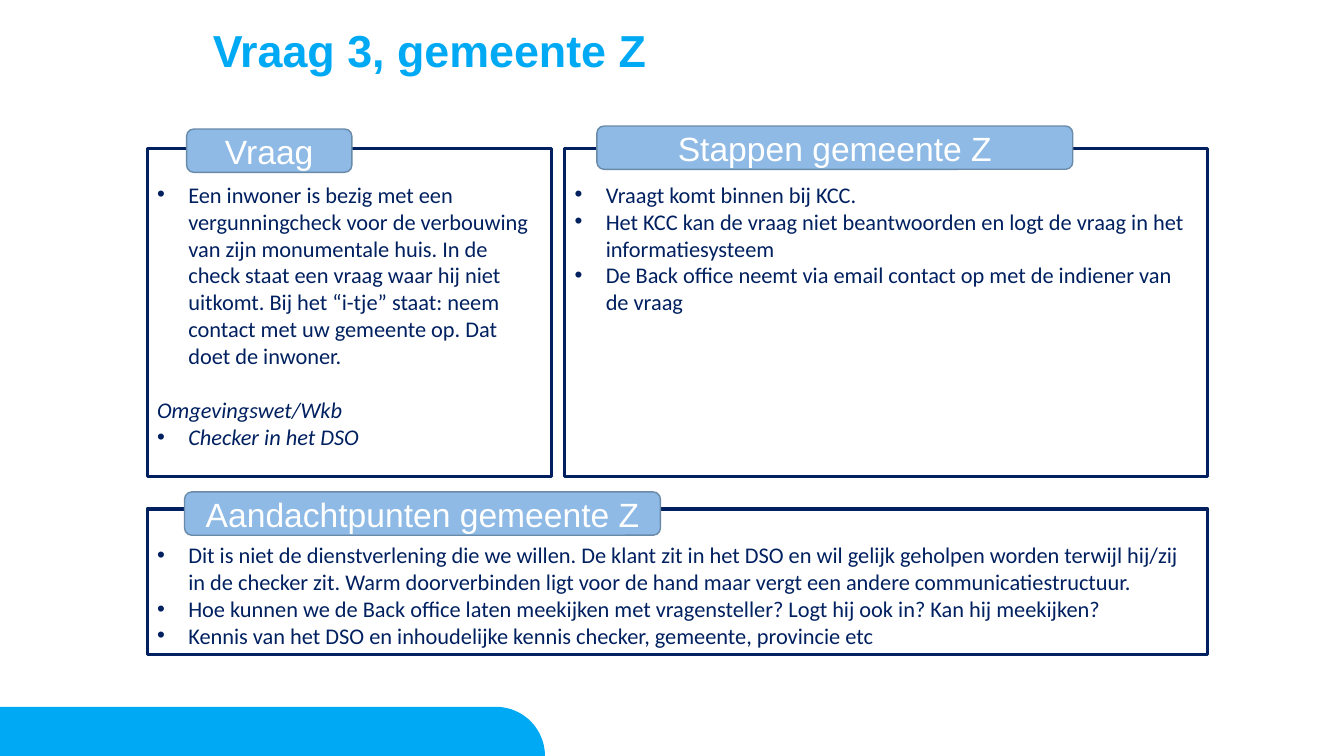
import math
from lxml import etree
from pptx import Presentation
from pptx import util as u
from pptx.dml.color import RGBColor
from pptx.enum import shapes, text
from pptx.oxml.ns import qn

COLORS = {"sky": "00A9F3", "navy": "002060", "tab": "8EBAE5",
          "tab_edge": "698AA9", "white": "FFFFFF"}

presentation = Presentation()
presentation.slide_width, presentation.slide_height = u.Inches(13.33), u.Inches(7.5)
column = presentation.slide_width / 100
row = presentation.slide_height / 100
slide = presentation.slides.add_slide(presentation.slide_layouts[5])


def write(paragraph, content, *, size, color, font="Calibri", bold=False, italic=False,
          bullet=False, align=text.PP_ALIGN.LEFT, before=0):
    if bullet:
        properties = paragraph._p.get_or_add_pPr()
        properties.set("marL", str(u.Inches(0.31)))
        properties.set("indent", str(-u.Inches(0.31)))
        etree.SubElement(properties, qn("a:buFont"), typeface="Arial")
        etree.SubElement(properties, qn("a:buChar"), char="•")
    paragraph.text = content
    paragraph.alignment = align
    paragraph.space_before = u.Pt(before)
    paragraph.font.name = font
    paragraph.font.size = u.Pt(size)
    paragraph.font.bold = bold
    paragraph.font.italic = italic
    paragraph.font.color.rgb = RGBColor.from_string(COLORS[color])


def add_box(kind, left, top, width, height, *, line, line_width, fill=None):
    """Add a preset shape placed in grid columns and rows."""
    shape = slide.shapes.add_shape(kind, round(left * column), round(top * row),
                                   round(width * column), round(height * row))
    shape.shadow.inherit = False
    if fill:
        shape.fill.solid()
        shape.fill.fore_color.rgb = RGBColor.from_string(COLORS[fill])
    else:
        shape.fill.background()
    shape.line.color.rgb = RGBColor.from_string(COLORS[line])
    shape.line.width = u.Pt(line_width)
    shape.text_frame.word_wrap = True
    return shape


# Footer band with a quarter circle at its right end
band_right, radius = 40.55 * column, 6.5 * row
bottom = presentation.slide_height
arc = [(band_right - radius + radius * math.sin(math.radians(angle)),
        bottom - radius * math.cos(math.radians(angle))) for angle in range(0, 91, 3)]
builder = slide.shapes.build_freeform(0, bottom)
builder.add_line_segments([(0, bottom - radius), *arc], close=True)
footer = builder.convert_to_shape()
footer.shadow.inherit = False
footer.fill.solid()
footer.fill.fore_color.rgb = RGBColor.from_string(COLORS["sky"])
footer.line.fill.background()

# Title
title = slide.shapes.title
title.left, title.top = round(15.08 * column), round(3.2 * row)
title.width, title.height = round(76 * column), round(10.4 * row)
title.text_frame.auto_size = text.MSO_AUTO_SIZE.NONE
title.text_frame.vertical_anchor = text.MSO_ANCHOR.TOP
write(title.text_frame.paragraphs[0], "Vraag 3, gemeente Z",
      size=32, color="sky", font="Arial", bold=True)
title.text_frame.paragraphs[0].line_spacing = 0.9

# Panels: frame, tab label, tab place, and paragraphs with their format
left, right, middle = 10.95, 89.87, 42.01
item = {"bullet": True}
panels = [
    ((left, 19.67, 30.08, 43.33), "Vraag", (13.88, 17.07, 12.3), [
        ("Een inwoner is bezig met een vergunningcheck voor de verbouwing van zijn "
         "monumentale huis. In de check staat een vraag waar hij niet uitkomt. Bij het "
         "“i-tje” staat: neem contact met uw gemeente op. Dat doet de inwoner.", item),
        ("Omgevingswet/Wkb", {"italic": True, "before": 19.5}),
        ("Checker in het DSO", {"italic": True, "bullet": True})]),
    ((middle, 19.67, right - middle, 43.33), "Stappen gemeente Z", (44.41, 16.67, 35.41), [
        ("Vraagt komt binnen bij KCC.", item),
        ("Het KCC kan de vraag niet beantwoorden en logt de vraag in het "
         "informatiesysteem", item),
        ("De Back office neemt via email contact op met de indiener van de vraag", item)]),
    ((left, 67.33, right - left, 19.2), "Aandachtpunten gemeente Z", (13.73, 65.07, 35.41), [
        ("Dit is niet de dienstverlening die we willen. De klant zit in het DSO en wil "
         "gelijk geholpen worden terwijl hij/zij in de checker zit. Warm doorverbinden "
         "ligt voor de hand maar vergt een andere communicatiestructuur.", item),
        ("Hoe kunnen we de Back office laten meekijken met vragensteller? "
         "Logt hij ook in? Kan hij meekijken?", item),
        ("Kennis van het DSO en inhoudelijke kennis checker, gemeente, provincie etc",
         item)]),
]
for frame_place, label, tab_place, paragraphs in panels:
    frame = add_box(shapes.MSO_SHAPE.RECTANGLE, *frame_place, line="navy", line_width=2.25)
    body = frame.text_frame
    body.vertical_anchor = text.MSO_ANCHOR.TOP
    body.margin_top = round(4.27 * row)
    for index, (content, style) in enumerate(paragraphs):
        paragraph = body.add_paragraph() if index else body.paragraphs[0]
        write(paragraph, content, size=16, color="navy", **style)

    tab = add_box(shapes.MSO_SHAPE.ROUNDED_RECTANGLE, *tab_place, 5.73,
                  line="tab_edge", line_width=1, fill="tab")
    tab.text_frame.vertical_anchor = text.MSO_ANCHOR.MIDDLE
    write(tab.text_frame.paragraphs[0], label, size=24, color="white", font="Arial",
          align=text.PP_ALIGN.CENTER)

presentation.save("out.pptx")
